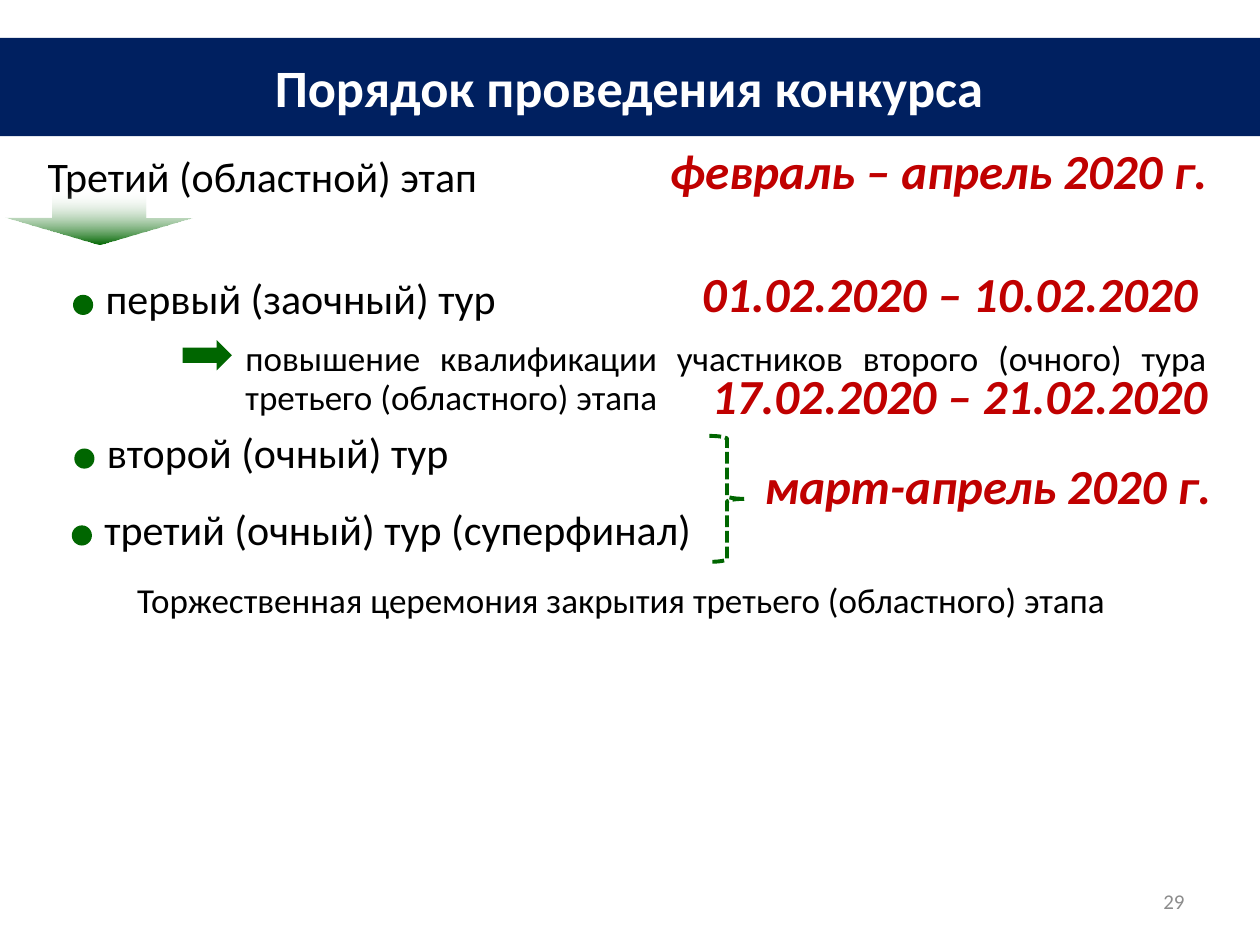
from dataclasses import dataclass
from lxml.etree import SubElement
from pptx import Presentation
from pptx.dml.color import RGBColor
from pptx.enum.dml import MSO_LINE
from pptx.enum.shapes import MSO_SHAPE as SHAPE
from pptx.enum.text import MSO_ANCHOR as ANCHOR, PP_ALIGN as ALIGN
from pptx.oxml.ns import qn
from pptx.util import Inches, Pt


@dataclass(frozen=True)
class Theme:
    """Colours, font and type sizes of the slide."""
    font: str = "Calibri"
    navy: str = "002060"
    green: str = "006600"
    red: str = "C00000"
    black: str = "000000"
    white: str = "FFFFFF"
    grey: str = "8C8C8C"
    title: int = 30
    date: int = 28
    stage: int = 24
    note: int = 20
    number: int = 12
    leading: int = 22


T = Theme()


def add_text(slide, box, text, size, color, align=ALIGN.LEFT, leading=None,
             indent=None, anchor=ANCHOR.TOP, **style):
    """Place one paragraph of text in a box."""
    tf = slide.shapes.add_textbox(*map(Inches, box)).text_frame
    tf.word_wrap, tf.vertical_anchor = True, anchor
    p = tf.paragraphs[0]
    p.alignment = align
    if leading:
        p.line_spacing = Pt(leading)
    if indent:
        p._p.get_or_add_pPr().set("indent", str(Inches(indent)))
    r = p.add_run()
    r.text = text
    r.font.color.rgb = RGBColor.from_string(color)
    for name, value in {"name": T.font, "size": Pt(size), **style}.items():
        setattr(r.font, name, value)


def add_solid(slide, kind, box, color):
    """Place a flat shape without an outline."""
    sp = slide.shapes.add_shape(kind, *map(Inches, box))
    sp.shadow.inherit = False
    sp.fill.solid()
    sp.fill.fore_color.rgb = RGBColor.from_string(color)
    sp.line.fill.background()
    return sp


def add_header(slide, box, text):
    """Draw the title band across the slide."""
    left, top, width, height = box
    add_solid(slide, SHAPE.RECTANGLE, box, T.navy)
    add_text(slide, (left + 1.06, top + 0.09, width - 2.13, height - 0.17), text,
             T.title, T.white, ALIGN.CENTER, bold=True)


def add_stage(slide, left, top, text):
    """Write the name of a stage or round."""
    add_text(slide, (left, top, 7, 0.42), text, T.stage, T.black, leading=T.leading)


def add_date(slide, right, top, text, width=4.69):
    """Write a date that ends at the right edge."""
    add_text(slide, (right - width, top, width, 0.44), text, T.date, T.red,
             ALIGN.RIGHT, T.leading, 0.4, bold=True, italic=True)


def add_round(slide, left, top, text):
    """Write a round with its green dot."""
    size = 0.16
    add_stage(slide, left, top, text)
    add_solid(slide, SHAPE.OVAL, (left - size, top + 0.13, size, size), T.green)


def add_fading_arrow(slide, box):
    """Draw the down arrow that fades out towards its tail."""
    sp = add_solid(slide, SHAPE.DOWN_ARROW, box, T.green)
    sp.fill.gradient()
    sp.fill.gradient_angle = 90
    stops = sp.fill.gradient_stops
    for stop, color, position in zip(stops, (T.green, T.white), (0, 1)):
        stop.color.rgb = RGBColor.from_string(color)
        stop.position = position
    clear = list(sp._element.spPr.iter(qn("a:srgbClr")))[-1]
    SubElement(clear, qn("a:alpha"), val="0")


def add_brace(slide, box):
    """Draw the dashed brace that joins two rounds."""
    sp = add_solid(slide, SHAPE.RIGHT_BRACE, box, T.green)
    sp.fill.background()
    sp.line.color.rgb = RGBColor.from_string(T.green)
    for name, value in {"width": Pt(2.25), "dash_style": MSO_LINE.SQUARE_DOT}.items():
        setattr(sp.line, name, value)


def add_training(slide, box, text):
    """Write the training note with its arrow on the left."""
    left, top, width, height = box
    add_text(slide, box, text, T.note, T.black, ALIGN.JUSTIFY, T.leading)
    add_solid(slide, SHAPE.RIGHT_ARROW, (left - 0.4, top + 0.05, 0.39, 0.24), T.green)


def add_schedule(slide, box):
    """Lay out the stage, its rounds and their dates."""
    left, top, width, height = box
    right = left + width
    add_stage(slide, left, top, "Третий (областной) этап")
    add_date(slide, right, top - 0.01, "февраль – апрель 2020 г.", 5.55)
    add_fading_arrow(slide, (left - 0.24, top + 0.27, 1.49, 0.43))

    rounds = (
        (0.46, 0.97, "первый (заочный) тур"),
        (0.47, 2.19, "второй (очный) тур"),
        (0.45, 2.8, "третий (очный) тур (суперфинал)"),
    )
    for x, y, text in rounds:
        add_round(slide, left + x, top + y, text)
    add_brace(slide, (left + 5.35, top + 2.22, 0.28, 1))
    add_training(slide, (left + 1.57, top + 1.41, width - 1.57, 0.72),
                 "повышение квалификации участников второго (очного) тура "
                 "третьего (областного) этапа ")

    dates = (
        (0.01, 0.96, "01.02.2020 – 10.02.2020 "),
        (0, 1.77, "17.02.2020 – 21.02.2020"),
        (0.03, 2.49, "март-апрель 2020 г."),
    )
    for x, y, text in dates:
        add_date(slide, right + x, top + y, text)
    add_text(slide, (left + 0.31, top + 3.3, 9.29, 0.44),
             "Торжественная церемония закрытия третьего (областного) этапа",
             T.note, T.black, indent=0.4)


def add_number(slide, box, text):
    """Write the slide number."""
    add_text(slide, box, text, T.number, T.grey, ALIGN.RIGHT, anchor=ANCHOR.MIDDLE)


def main():
    """Build the slide and save it."""
    prs = Presentation()
    prs.slide_width, prs.slide_height = Inches(10), Inches(7.5)
    slide = prs.slides.add_slide(prs.slide_layouts[6])
    add_header(slide, (0, 0.3, 10, 0.78), "Порядок проведения конкурса")
    add_schedule(slide, (0.28, 1.24, 9.4, 3.74))
    add_number(slide, (7.17, 6.95, 2.33, 0.4), "29")
    prs.save("out.pptx")


if __name__ == "__main__":
    main()
